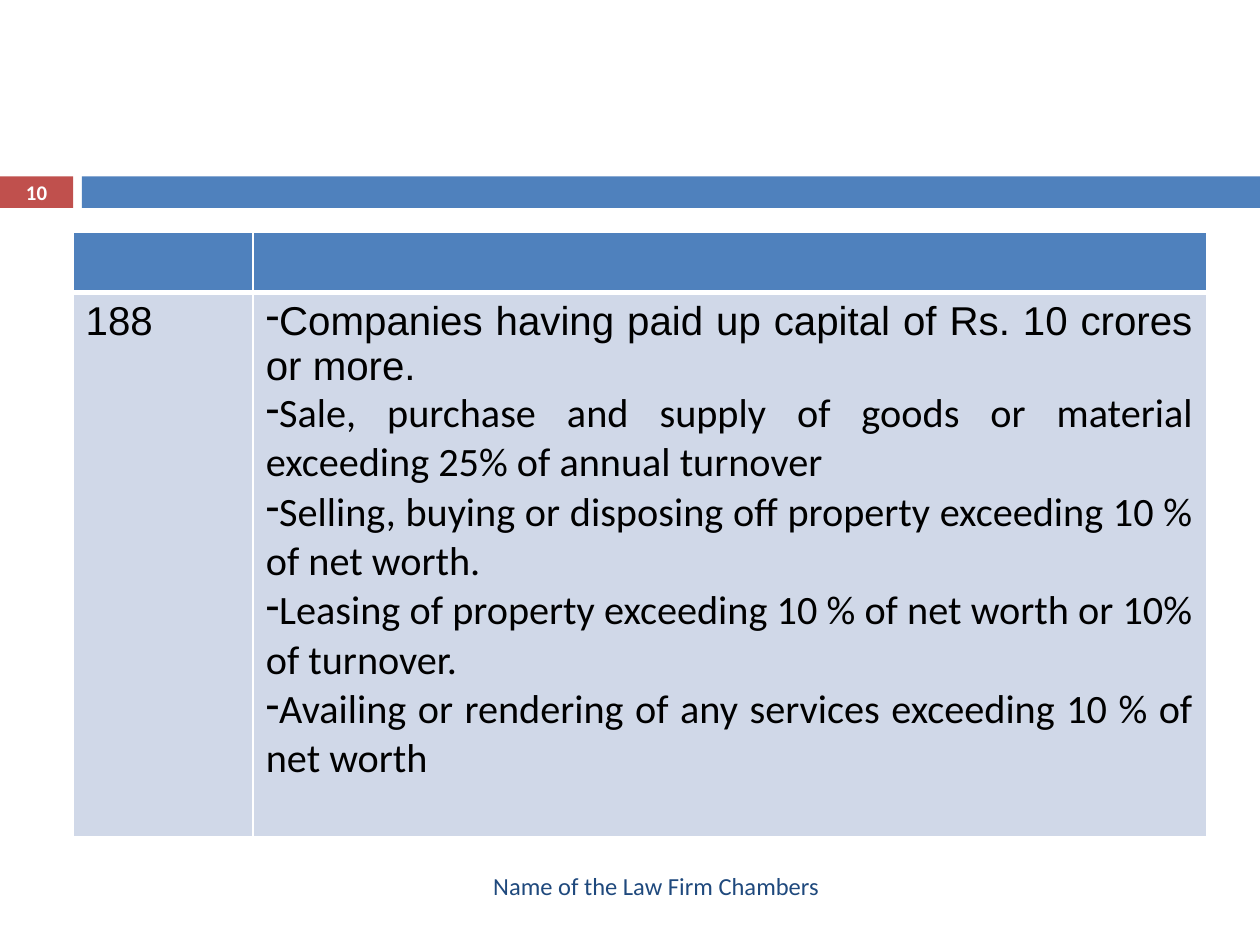
from dataclasses import dataclass

from lxml import etree
from pptx import Presentation
from pptx.dml.color import RGBColor
from pptx.enum.shapes import MSO_SHAPE
from pptx.enum.text import MSO_ANCHOR, PP_ALIGN
from pptx.oxml.ns import qn
from pptx.util import Inches, Pt

RECTANGLE = MSO_SHAPE.RECTANGLE
MIDDLE = MSO_ANCHOR.MIDDLE
CENTER, RIGHT, JUSTIFY = PP_ALIGN.CENTER, PP_ALIGN.RIGHT, PP_ALIGN.JUSTIFY

BLUE = RGBColor(0x4F, 0x81, 0xBD)
RED = RGBColor(0xC0, 0x50, 0x4D)
PALE = RGBColor(0xD0, 0xD8, 0xE8)
NAVY = RGBColor(0x1F, 0x49, 0x7D)
BLACK = RGBColor(0, 0, 0)
WHITE = RGBColor(0xFF, 0xFF, 0xFF)

COLUMN_WIDTHS = (1.43, 7.57)
ROW_HEIGHTS = (0.48, 4.32)
SECTION = "188"
LIMITS = (
    ("Companies having paid up capital of Rs. 10 crores or more.", "Arial"),
    ("Sale, purchase and supply of goods or material exceeding 25% of annual turnover", "Calibri"),
    ("Selling, buying or disposing off property exceeding 10 % of net worth.", "Calibri"),
    ("Leasing of property exceeding 10 % of net worth or 10% of turnover.", "Calibri"),
    ("Availing or rendering of any services exceeding 10 % of net worth ", "Calibri"),
)


@dataclass
class Bar:
    left: float
    width: float
    color: RGBColor


@dataclass
class Label:
    text: str
    area: tuple
    align: PP_ALIGN
    size: float
    color: RGBColor
    bold: bool = False


BARS = (Bar(0, 0.58, RED), Bar(0.65, 9.35, BLUE))
LABELS = (
    Label("Name of the Law Firm Chambers", (0.67, 6.83, 5.93, 0.4), RIGHT, 14, NAVY),
    Label("10", (0, 1.39, 0.58, 0.27), CENTER, 11.9, WHITE, True),
)


def write(para, text: str, align: PP_ALIGN, color: RGBColor, **formats) -> None:
    para.alignment = align
    span = para.add_run()
    span.text = text
    span.font.color.rgb = color
    for name, value in formats.items():
        setattr(span.font, name, value)


def add_bar(page, bar: Bar) -> None:
    box = page.shapes.add_shape(
        RECTANGLE, Inches(bar.left), Inches(1.4), Inches(bar.width), Inches(0.25))
    box.shadow.inherit = False
    box.fill.solid()
    box.fill.fore_color.rgb = bar.color
    box.line.fill.background()


def add_label(page, label: Label) -> None:
    frame = page.shapes.add_textbox(*map(Inches, label.area)).text_frame
    frame.word_wrap = True
    frame.vertical_anchor = MIDDLE
    if label.align == CENTER:
        frame.margin_left = frame.margin_right = 0
    write(frame.paragraphs[0], label.text, label.align, label.color,
          name="Calibri", size=Pt(label.size), bold=label.bold)


def style_cell(cell, color: RGBColor, top: int, bottom: int) -> None:
    properties = cell._tc.get_or_add_tcPr()
    for side, points in (("L", 1), ("R", 1), ("T", top), ("B", bottom)):
        line = etree.SubElement(properties, qn(f"a:ln{side}"), w=str(Pt(points)))
        fill = etree.SubElement(line, qn("a:solidFill"))
        etree.SubElement(fill, qn("a:srgbClr"), val=str(WHITE))
    cell.fill.solid()
    cell.fill.fore_color.rgb = color


def add_dash(para) -> None:
    properties = para._p.get_or_add_pPr()
    properties.set("marL", "0")
    properties.set("indent", "0")
    etree.SubElement(properties, qn("a:buChar"), char="-")


def add_limits_table(page) -> None:
    table = page.shapes.add_table(
        2, 2, Inches(0.58), Inches(1.84), Inches(9), Inches(4.8)).table
    for column, width in zip(table.columns, COLUMN_WIDTHS):
        column.width = Inches(width)
    for row, height in zip(table.rows, ROW_HEIGHTS):
        row.height = Inches(height)
    for column in range(2):
        style_cell(table.cell(0, column), BLUE, 1, 3)
        style_cell(table.cell(1, column), PALE, 3, 1)

    write(table.cell(1, 0).text_frame.paragraphs[0], SECTION, JUSTIFY, BLACK,
          name="Arial", size=Pt(23))
    frame = table.cell(1, 1).text_frame
    for index, (text, font) in enumerate(LIMITS):
        para = frame.add_paragraph() if index else frame.paragraphs[0]
        write(para, text, JUSTIFY, BLACK, name=font, size=Pt(23))
        add_dash(para)


def main() -> None:
    deck = Presentation()
    deck.slide_width, deck.slide_height = Inches(10), Inches(7.5)
    page = deck.slides.add_slide(deck.slide_layouts[6])
    # Band across the top
    for bar in BARS:
        add_bar(page, bar)
    # Section and its limits
    add_limits_table(page)
    # Footer and page number
    for label in LABELS:
        add_label(page, label)
    deck.save("out.pptx")


if __name__ == "__main__":
    main()
